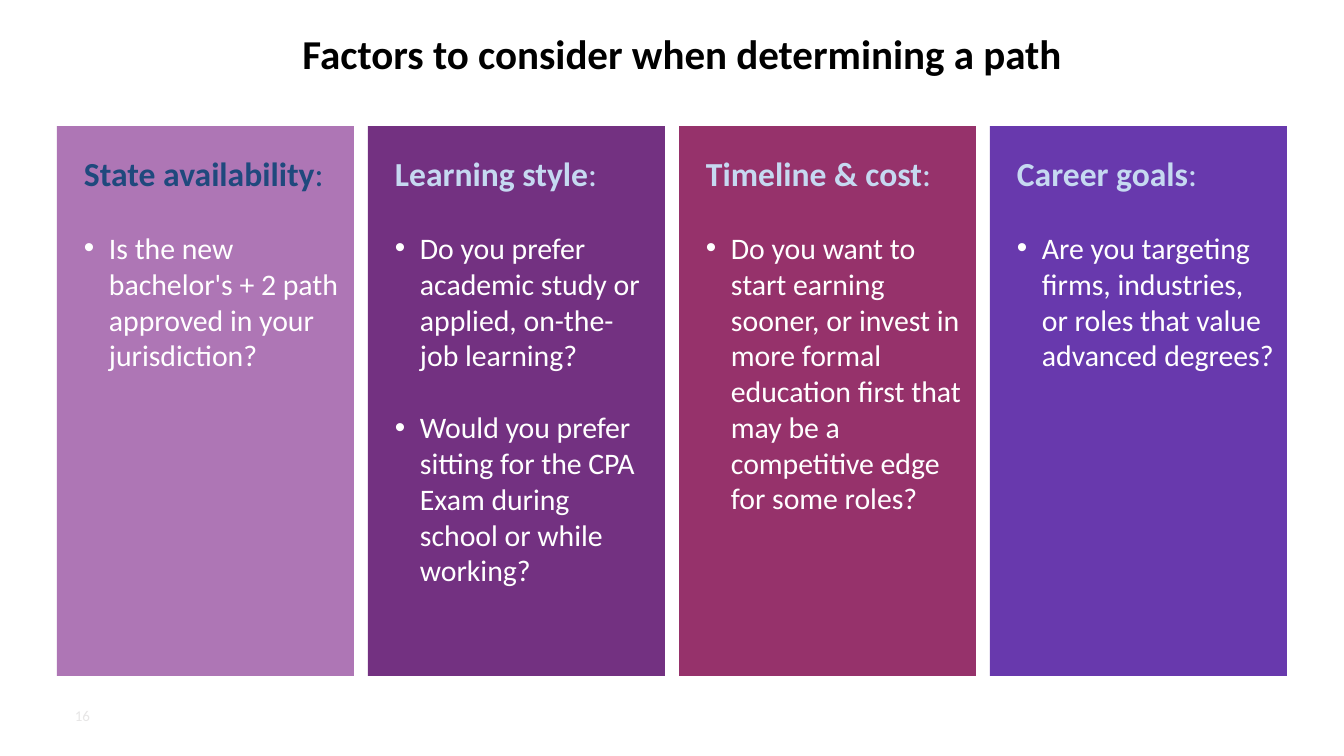
from lxml.etree import SubElement
from pptx import Presentation
from pptx.dml.color import RGBColor
from pptx.enum.text import MSO_ANCHOR as Anchor, MSO_AUTO_SIZE as AutoSize, PP_ALIGN as Align
from pptx.oxml.ns import qn
from pptx.util import Pt

EMU_PER_PX = 12192000 / 1344
COMPARISON_LAYOUT = 4

COLORS = {
    "title": "000000", "white": "FFFFFF", "navy": "1F497D", "ice": "C6D9F1", "number": "E7E6E6",
    "orchid": "AE76B5", "purple": "733181", "berry": "96326B", "violet": "6839AD",
}

# Panel fill, heading colour, heading, questions
FACTORS = [
    ("orchid", "navy", "State availability",
     ["Is the new bachelor's + 2 path approved in your jurisdiction?"]),
    ("purple", "ice", "Learning style",
     ["Do you prefer academic study or applied, on-the-job learning?",
      "Would you prefer sitting for the CPA Exam during school or while working?"]),
    ("berry", "ice", "Timeline & cost",
     ["Do you want to start earning sooner, or invest in more formal education "
      "first that may be a competitive edge for some roles?"]),
    ("violet", "ice", "Career goals",
     ["Are you targeting firms, industries, or roles that value advanced degrees?"]),
]


def px(length):
    return round(length * EMU_PER_PX)


def add_text(paragraph, text, *, size, color, bold=False, font="Calibri"):
    run = paragraph.add_run()
    run.text = text
    run.font.name = font
    run.font.size = Pt(size)
    run.font.bold = bold
    run.font.color.rgb = RGBColor.from_string(COLORS[color])


class SlideBuilder:
    def __init__(self, presentation):
        layout = presentation.slide_layouts[COMPARISON_LAYOUT]
        self.slide = presentation.slides.add_slide(layout)
        title, *self.bodies = self.slide.placeholders
        self.title_shape = title

    def place(self, shape, left, top, width, height):
        shape.left, shape.top, shape.width, shape.height = map(px, (left, top, width, height))

    def frame(self, shape, insets, anchor):
        frame = shape.text_frame
        frame.word_wrap = True
        frame.auto_size = AutoSize.NONE
        frame.vertical_anchor = anchor
        (frame.margin_left, frame.margin_top,
         frame.margin_right, frame.margin_bottom) = map(px, insets)
        return frame

    def format_paragraph(self, paragraph, indent=0, gap=0):
        properties = paragraph._p.get_or_add_pPr()
        properties.set("marL", str(px(indent)))
        properties.set("indent", str(-px(indent)))
        if indent:
            SubElement(properties, qn("a:buFont"), typeface="Arial")
            SubElement(properties, qn("a:buChar"), char="•")
        else:
            SubElement(properties, qn("a:buNone"))
        paragraph.alignment = Align.LEFT
        paragraph.space_before = Pt(gap)
        paragraph.space_after = Pt(0)

    def title(self, text):
        self.place(self.title_shape, 56, 21, 1252, 64)
        frame = self.frame(self.title_shape, (10, 5, 10, 5), Anchor.MIDDLE)
        paragraph = frame.paragraphs[0]
        paragraph.alignment = Align.CENTER
        add_text(paragraph, text, size=29.3, color="title", bold=True)

    def panel(self, shape, left, fill, heading_color, heading, questions):
        self.place(shape, left, 126, 297, 550)
        shape.fill.solid()
        shape.fill.fore_color.rgb = RGBColor.from_string(COLORS[fill])
        frame = self.frame(shape, (27, 27, 13, 27), Anchor.TOP)
        paragraph = frame.paragraphs[0]
        self.format_paragraph(paragraph)
        add_text(paragraph, heading, size=24, color=heading_color, bold=True)
        add_text(paragraph, ":", size=24, color=heading_color)
        for question in questions:
            paragraph = frame.add_paragraph()
            self.format_paragraph(paragraph, indent=25, gap=26)
            add_text(paragraph, question, size=21.3, color="white")

    def page_number(self, text):
        box = self.slide.shapes.add_textbox(px(65), px(702), px(80), px(28))
        frame = self.frame(box, (10, 0, 10, 0), Anchor.MIDDLE)
        add_text(frame.paragraphs[0], text, size=10.7, color="number")


def main():
    presentation = Presentation()
    presentation.slide_width, presentation.slide_height = px(1344), px(756)
    builder = SlideBuilder(presentation)

    # Title
    builder.title("Factors to consider when determining a path")

    # Four equal panels
    for column, (shape, factor) in enumerate(zip(builder.bodies, FACTORS)):
        builder.panel(shape, 57 + 311 * column, *factor)

    # Page number
    builder.page_number("16")

    presentation.save("out.pptx")


if __name__ == "__main__":
    main()
